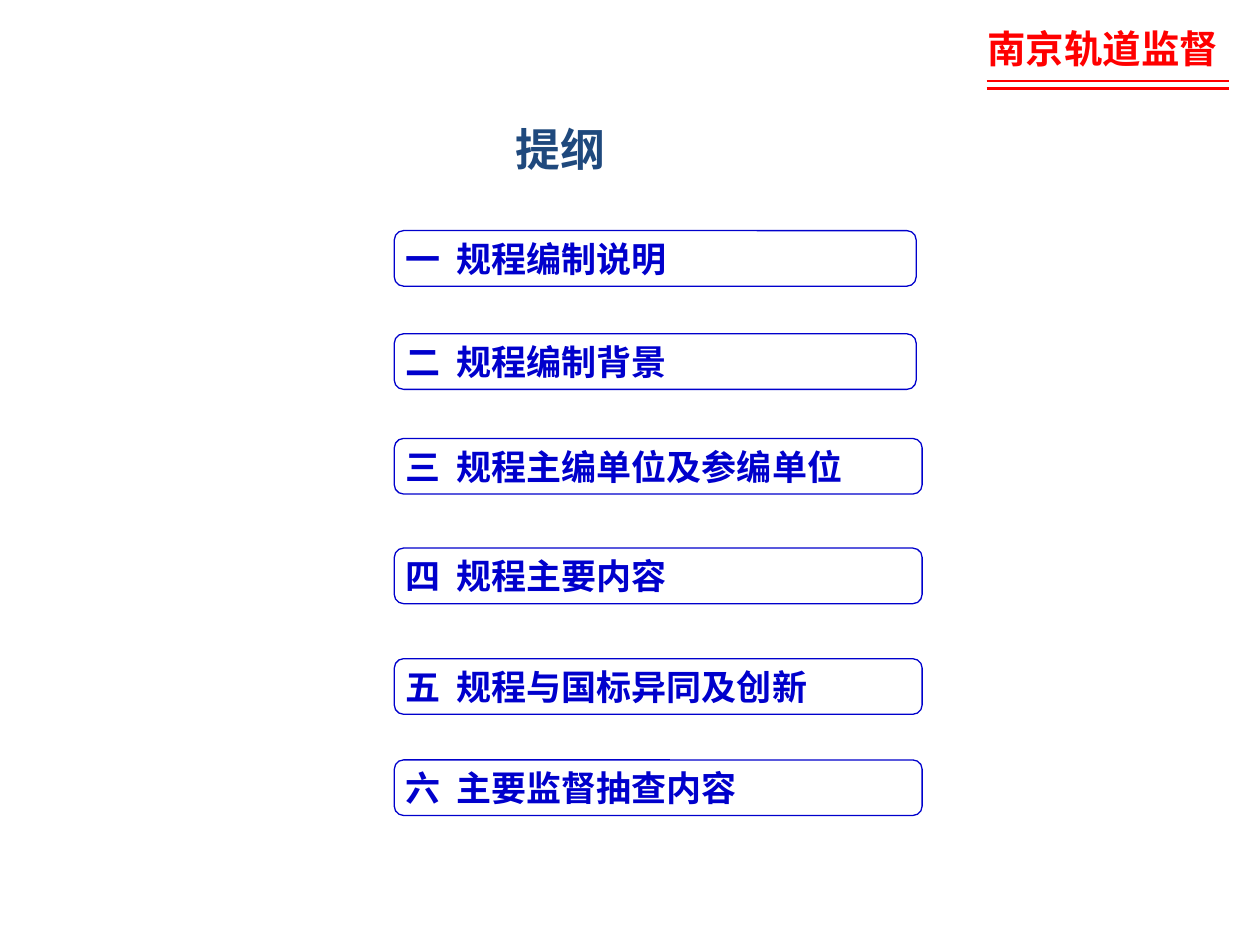
from lxml.etree import SubElement
from pptx import Presentation
from pptx.dml.color import RGBColor
from pptx.enum.shapes import MSO_CONNECTOR, MSO_SHAPE
from pptx.enum.text import MSO_ANCHOR
from pptx.oxml.ns import qn
from pptx.util import Cm, Pt

COLOURS = {"header": "FF0000", "title": "1F497D", "item": "0000CC"}

ITEMS = [
    ("一\t规程编制说明", 4.65, 10.52, "Arial"),
    ("二\t规程编制背景", 6.73, 10.52, "Arial"),
    ("三\t规程主编单位及参编单位", 8.84, 10.64, "Arial"),
    ("四\t规程主要内容", 11.05, 10.64, "Arial"),
    ("五\t规程与国标异同及创新", 13.28, 10.64, "Noto Sans CJK SC"),
    ("六\t主要监督抽查内容", 15.32, 10.64, "Noto Sans CJK SC"),
]


def write(box, text, size, colour, font="Calibri", anchor=MSO_ANCHOR.TOP,
          insets=(0.25, 0.13), spacing=None, tab=None, small_caps=False):
    frame = box.text_frame
    frame.word_wrap = True
    frame.vertical_anchor = anchor
    frame.margin_left = frame.margin_right = Cm(insets[0])
    frame.margin_top = frame.margin_bottom = Cm(insets[1])
    para = frame.paragraphs[0]
    if spacing:
        para.line_spacing = Pt(spacing)
    if tab:
        stops = SubElement(para._p.get_or_add_pPr(), qn("a:tabLst"))
        SubElement(stops, qn("a:tab"), pos=str(Cm(tab)), algn="l")
    para.alignment = 1
    span = para.add_run()
    span.text = text
    span.font.name = font
    span.font.size = Pt(size)
    span.font.bold = True
    span.font.color.rgb = RGBColor.from_string(COLOURS[colour])
    if small_caps:
        span._r.get_or_add_rPr().set("cap", "small")


class OutlineSlide:
    """Holds the page and the style of its elements."""

    def __init__(self, deck):
        self.page = deck.slides.add_slide(deck.slide_layouts[6])

    def label(self, text, left, top, width, height, **style):
        box = self.page.shapes.add_textbox(Cm(left), Cm(top), Cm(width), Cm(height))
        write(box, text, **style)

    def rule(self, left, right, top):
        line = self.page.shapes.add_connector(
            MSO_CONNECTOR.STRAIGHT, Cm(left), Cm(top), Cm(right), Cm(top))
        line.line.color.rgb = RGBColor.from_string(COLOURS["header"])
        line.line.width = Pt(1.5)
        SubElement(line._element.spPr, qn("a:effectLst"))

    def item(self, text, top, width, font):
        box = self.page.shapes.add_shape(
            MSO_SHAPE.ROUNDED_RECTANGLE, Cm(7.95), Cm(top), Cm(width), Cm(1.12))
        box.shadow.inherit = False
        box.fill.background()
        box.line.color.rgb = RGBColor.from_string(COLOURS["item"])
        box.line.width = Pt(0.75)
        write(box, text, 20, "item", font, MSO_ANCHOR.MIDDLE, (0.18, 0.1), tab=1.02)


def main():
    deck = Presentation()
    deck.slide_width, deck.slide_height = Cm(25.4), Cm(19.05)
    slide = OutlineSlide(deck)
    slide.label("南京轨道监督", 19.66, 0.38, 5.7, 1.19, size=22, colour="header")
    for top in (1.63, 1.78):
        slide.rule(19.89, 24.77, top)
    slide.label("提纲", 10.06, 2.77, 3.5, 1.2, size=32, colour="title",
                insets=(0.33, 0.1), spacing=20.4, small_caps=True)
    for item in ITEMS:
        slide.item(*item)
    deck.save("out.pptx")


if __name__ == "__main__":
    main()
